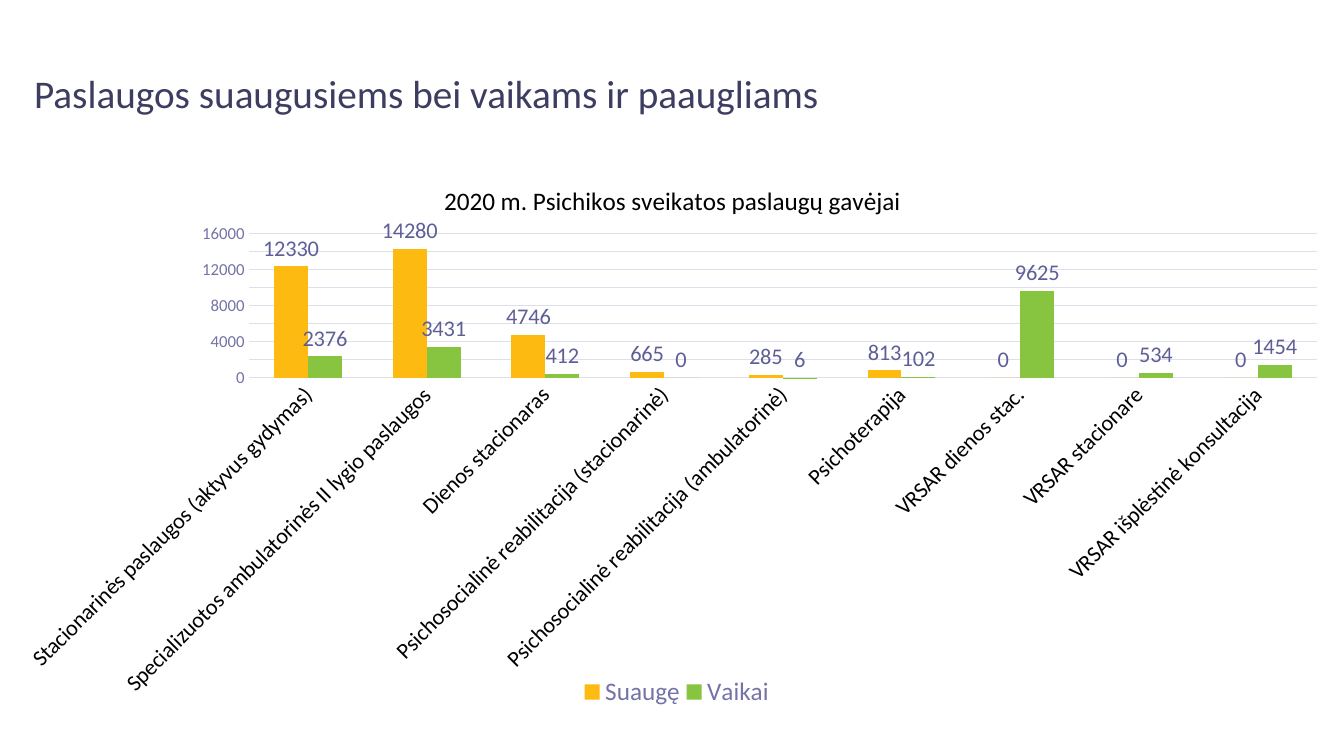
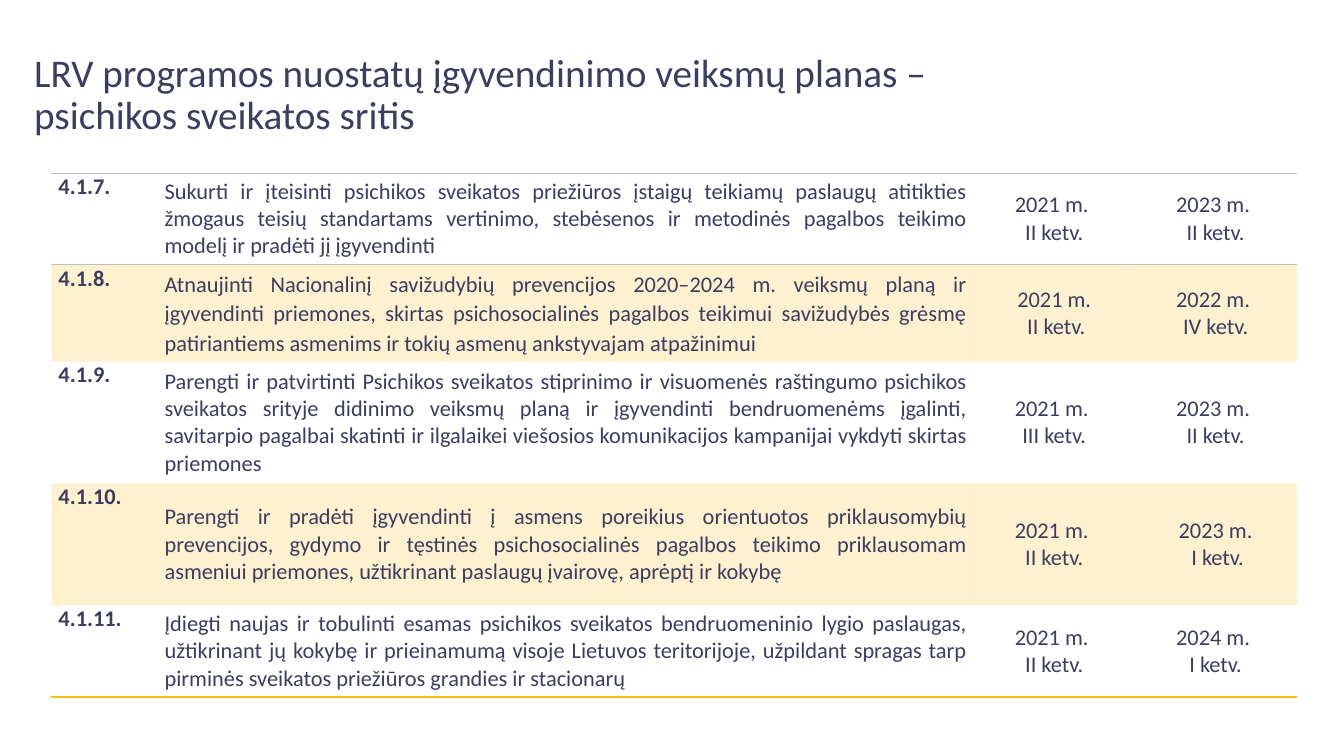
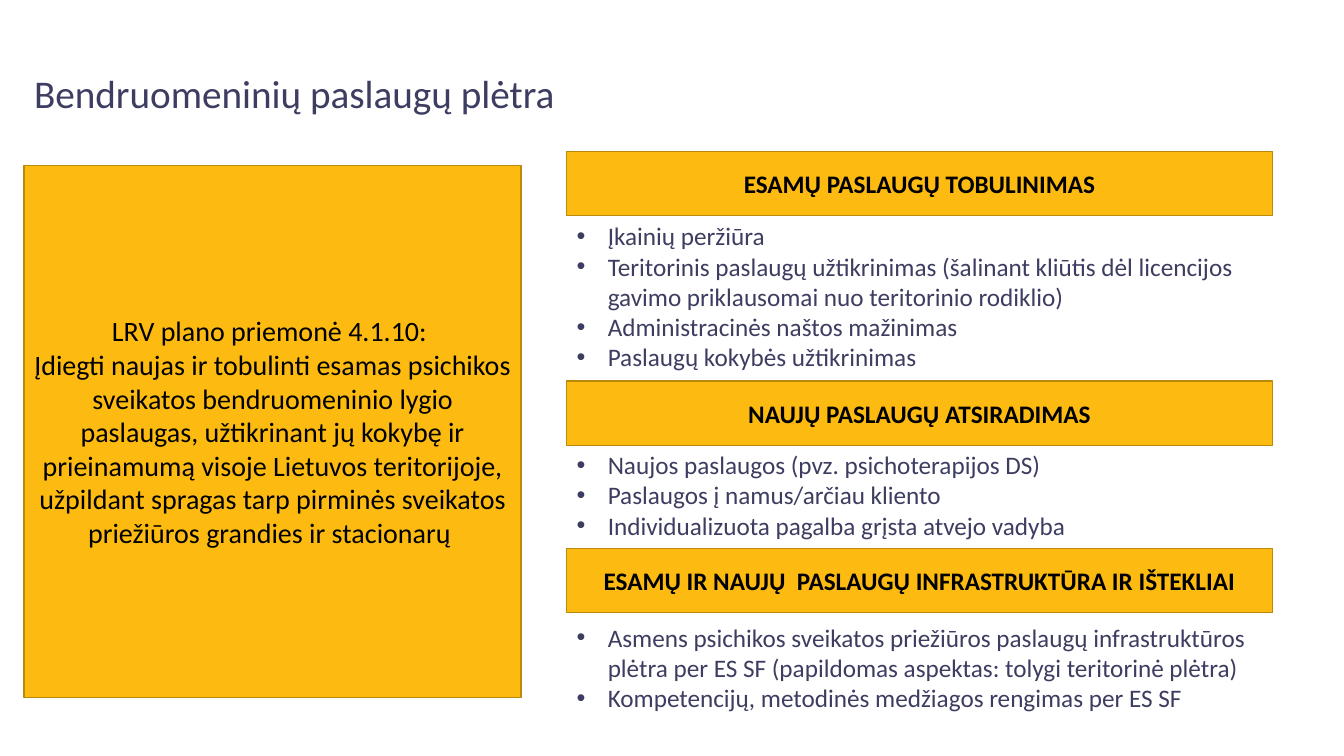
from lxml import etree
from pptx import Presentation
from pptx import util as u
from pptx.chart.data import CategoryChartData
from pptx.dml.color import RGBColor
from pptx.enum import chart as ch, shapes, text
from pptx.oxml import parse_xml
from pptx.oxml.ns import nsdecls, qn

# Shared look
INK, VIOLET, PALE_VIOLET, BLACK = "3D3D61", "5F5F97", "7373A7", "000000"
GOLD, DARK_GOLD, GREEN, GRID, GREY = "FDBB11", "BB8A0D", "87C440", "DFDFEB", "BFBFBF"
rgb = RGBColor.from_string

prs = Presentation()
prs.slide_height = u.Inches(7.5)
prs.slide_width = u.Emu(prs.slide_height * 16 // 9)
COL, ROW = prs.slide_width / 100, prs.slide_height / 100


def area(left, top, width, height):
    """Turn columns and rows of a 100 x 100 grid into lengths."""
    return [u.Emu(round(n * unit)) for n, unit in zip((left, top, width, height), (COL, ROW) * 2)]


def style(font, size, color, bold=False):
    font.name, font.size, font.bold = "Calibri", u.Pt(size), bold
    font.color.rgb = rgb(color)


# Slides with their titles
titles = [
    "Paslaugos suaugusiems bei vaikams ir paaugliams",
    "LRV programos nuostatų įgyvendinimo veiksmų planas – \vpsichikos sveikatos sritis",
    "Bendruomeninių paslaugų plėtra",
]
slides = []
for title in titles:
    s = prs.slides.add_slide(prs.slide_layouts[6])
    tf = s.shapes.add_textbox(*area(1.8, 6.22, 94.75, 12.93)).text_frame
    tf.word_wrap = True
    tf.vertical_anchor = text.MSO_ANCHOR.MIDDLE
    tf.text = title
    p = tf.paragraphs[0]
    p.line_spacing = 0.9
    for r in p.runs:
        style(r.font, 28, INK)
    slides.append(s)
chart_slide, plan_slide, growth_slide = slides

# Slide 1: column chart
data = CategoryChartData()
data.categories = [
    "Stacionarinės paslaugos (aktyvus gydymas)",
    "Specializuotos ambulatorinės II lygio paslaugos",
    "Dienos stacionaras",
    "Psichosocialinė reabilitacija (stacionarinė)",
    "Psichosocialinė reabilitacija (ambulatorinė)",
    "Psichoterapija",
    "VRSAR dienos stac.",
    "VRSAR stacionare",
    "VRSAR išplėstinė konsultacija",
]
data.add_series("Suaugę", [12330, 14280, 4746, 665, 285, 813, 0, 0, 0])
data.add_series("Vaikai", [2376, 3431, 412, 0, 6, 102, 9625, 534, 1454])
chart = chart_slide.shapes.add_chart(
    ch.XL_CHART_TYPE.COLUMN_CLUSTERED, *area(0, 21.87, 100, 74.13), data).chart
style(chart.font, 10, INK)

chart.has_title = True
tf = chart.chart_title.text_frame
tf.text = "2020 m. Psichikos sveikatos paslaugų gavėjai"
style(tf.paragraphs[0].runs[0].font, 18, BLACK)

chart.has_legend = True
chart.legend.position = ch.XL_LEGEND_POSITION.BOTTOM
chart.legend.include_in_layout = False
style(chart.legend.font, 18, PALE_VIOLET)

for axis, size, color in ((chart.category_axis, 16, BLACK), (chart.value_axis, 12, PALE_VIOLET)):
    axis.major_tick_mark = axis.minor_tick_mark = ch.XL_TICK_MARK.NONE
    axis.format.line.fill.background()
    style(axis.tick_labels.font, size, color)
slant = chart.category_axis._element.find(qn("c:txPr"))
slant.find(qn("a:bodyPr")).set("rot", "-2700000")

axis = chart.value_axis
axis.minimum_scale, axis.maximum_scale, axis.major_unit = 0, 16000, 2000
axis.has_major_gridlines = True
axis.major_gridlines.format.line.color.rgb = rgb(GRID)
axis.major_gridlines.format.line.width = u.Pt(0.75)

plot = chart.plots[0]
plot.gap_width, plot.overlap, plot.vary_by_categories = 150, 0, False
for series, color in zip(plot.series, (GOLD, GREEN)):
    series.format.fill.solid()
    series.format.fill.fore_color.rgb = rgb(color)
    labels = series.data_labels
    labels.show_value = True
    labels.position = ch.XL_LABEL_POSITION.OUTSIDE_END
    style(labels.font, 16, VIOLET)

# Places of the chart title, plot and legend, in percent of the chart
plot_area = chart._chartSpace.chart.plotArea
for parent, index, places in (
    (chart.chart_title._element, 1, {"x": 32.7, "y": 2.4}),
    (plot_area, 0, {"x": 18.5, "y": 12.15, "w": 79.5, "h": 25.75}),
    (chart.legend._element, 1, {"x": 43, "y": 90, "w": 14.7, "h": 8}),
):
    for old in parent.findall(qn("c:layout")):
        parent.remove(old)
    layout = parse_xml(f'<c:layout {nsdecls("c")}><c:manualLayout/></c:layout>')
    settings = {"layoutTarget": "inner"} if parent is plot_area else {}
    settings.update(xMode="edge", yMode="edge")
    settings.update((tag, n / 100) for tag, n in places.items())
    for tag, val in settings.items():
        etree.SubElement(layout[0], qn("c:" + tag)).set("val", str(val))
    parent.insert(index, layout)

# Slide 2: table of planned actions (number, action, start, end)
actions = [
    ("4.1.7.", "Sukurti ir įteisinti psichikos sveikatos priežiūros įstaigų teikiamų paslaugų "
     "atitikties žmogaus teisių standartams vertinimo, stebėsenos ir metodinės pagalbos teikimo "
     "modelį ir pradėti jį įgyvendinti ", "2021 m. \nII ketv.", "2023 m. \nII ketv."),
    ("4.1.8.", "Atnaujinti Nacionalinį savižudybių prevencijos 2020–2024 m. veiksmų planą ir "
     "įgyvendinti priemones, skirtas psichosocialinės pagalbos teikimui savižudybės grėsmę "
     "patiriantiems asmenims ir tokių asmenų ankstyvajam atpažinimui ",
     "2021 m.\nII ketv.", "2022 m. \nIV ketv."),
    ("4.1.9.", "Parengti ir patvirtinti Psichikos sveikatos stiprinimo ir visuomenės raštingumo "
     "psichikos sveikatos srityje didinimo veiksmų planą ir įgyvendinti bendruomenėms įgalinti, "
     "savitarpio pagalbai skatinti ir ilgalaikei viešosios komunikacijos kampanijai vykdyti "
     "skirtas priemones", "2021 m. \nIII ketv.", "2023 m. \nII ketv."),
    ("4.1.10.", "Parengti ir pradėti įgyvendinti į asmens poreikius orientuotos priklausomybių "
     "prevencijos, gydymo ir tęstinės psichosocialinės pagalbos teikimo priklausomam asmeniui "
     "priemones, užtikrinant paslaugų įvairovę, aprėptį ir kokybę ",
     "2021 m. \nII ketv.", "2023 m.\nI ketv."),
    ("4.1.11.", "Įdiegti naujas ir tobulinti esamas psichikos sveikatos bendruomeninio lygio "
     "paslaugas, užtikrinant jų kokybę ir prieinamumą visoje Lietuvos teritorijoje, užpildant "
     "spragas tarp pirminės sveikatos priežiūros grandies ir stacionarų ",
     "2021 m. \nII ketv.", "2024 m. \nI ketv."),
]
row_heights = [12.13, 12.8, 16.13, 16.13, 12.13]
col_widths = [7.9, 60.75, 11.93, 12.08]
edges = [GREY, GREY, None, None, None, GOLD]
aligns = [text.PP_ALIGN.LEFT, text.PP_ALIGN.JUSTIFY, text.PP_ALIGN.CENTER, text.PP_ALIGN.CENTER]

table = plan_slide.shapes.add_table(
    len(actions), len(col_widths), *area(3.83, 22.9, sum(col_widths), sum(row_heights))).table
table.first_row = table.horz_banding = False
# Table style without fills and lines
table._tbl.tblPr.find(qn("a:tableStyleId")).text = "{2D5ABB26-0587-4C30-8999-92F81FD0307C}"
for column, width in zip(table.columns, col_widths):
    column.width = u.Emu(round(width * COL))

for i, action in enumerate(actions):
    table.rows[i].height = u.Emu(round(row_heights[i] * ROW))
    for j, words in enumerate(action):
        cell = table.cell(i, j)
        cell.margin_left = cell.margin_right = u.Inches(0.07)
        cell.margin_top = cell.margin_bottom = 0
        cell.vertical_anchor = text.MSO_ANCHOR.MIDDLE if j else text.MSO_ANCHOR.TOP
        cell.text_frame.text = words
        for p in cell.text_frame.paragraphs:
            p.alignment = aligns[j]
            style(p.runs[0].font, 16, INK, bold=j == 0)
        if (i, j) == (1, 1):
            p.line_spacing = 1.07
        if j > 1 and " \n" not in words:
            p._p.get_or_add_pPr().set("indent", str(u.Inches(0.04)))
        # Every second row is tinted
        if i % 2:
            cell.fill.solid()
            cell.fill.fore_color.rgb = rgb(GOLD)
            tint = cell._tc.tcPr.find(".//" + qn("a:srgbClr"))
            etree.SubElement(tint, qn("a:alpha")).set("val", "20000")
        else:
            cell.fill.background()
        # Neighbouring cells agree on the edge between them
        sides = {"lnL": None, "lnR": None, "lnT": edges[i], "lnB": edges[i + 1]}
        for n, (side, color) in enumerate(sides.items()):
            paint = "<a:noFill/>"
            if color:
                paint = f'<a:solidFill><a:srgbClr val="{color}"/></a:solidFill>'
            cell._tc.tcPr.insert(n, parse_xml(
                f'<a:{side} {nsdecls("a")} w="12700">{paint}</a:{side}>'))

# Slide 3: gold panels (place, size, bold, words)
right, width = 42.16, 52.51
panels = [
    ((1.8, 21.87, 36.98, 70.4), 20, False,
     "LRV plano priemonė 4.1.10: \nĮdiegti naujas ir tobulinti esamas psichikos sveikatos "
     "bendruomeninio lygio paslaugas, užtikrinant jų kokybę ir prieinamumą visoje Lietuvos "
     "teritorijoje, užpildant spragas tarp pirminės sveikatos priežiūros grandies ir stacionarų "),
]
for top, heading in (
    (20, "ESAMŲ PASLAUGŲ TOBULINIMAS"),
    (50.4, "NAUJŲ PASLAUGŲ ATSIRADIMAS"),
    (72.53, "ESAMŲ IR NAUJŲ  PASLAUGŲ INFRASTRUKTŪRA IR IŠTEKLIAI"),
):
    panels.append(((right, top, width, 8.53), 18, True, heading))

for place, size, bold, words in panels:
    sp = growth_slide.shapes.add_shape(shapes.MSO_SHAPE.RECTANGLE, *area(*place))
    sp.shadow.inherit = False
    sp.fill.solid()
    sp.fill.fore_color.rgb = rgb(GOLD)
    sp.line.color.rgb = rgb(DARK_GOLD)
    sp.line.width = u.Pt(1)
    tf = sp.text_frame
    tf.word_wrap = True
    tf.vertical_anchor = text.MSO_ANCHOR.MIDDLE
    tf.text = words
    for p in tf.paragraphs:
        p.alignment = text.PP_ALIGN.CENTER
        style(p.runs[0].font, size, BLACK, bold)

# Bulleted lists under the headings
for top, height, items in (
    (28.53, 25.6, [
        "Įkainių peržiūra",
        "Teritorinis paslaugų užtikrinimas (šalinant kliūtis dėl licencijos gavimo "
        "priklausomai nuo teritorinio rodiklio)",
        "Administracinės naštos mažinimas",
        "Paslaugų kokybės užtikrinimas"]),
    (58.8, 13.47, [
        "Naujos paslaugos (pvz. psichoterapijos DS)",
        "Paslaugos į namus/arčiau kliento",
        "Individualizuota pagalba grįsta atvejo vadyba"]),
    (81.6, 17.47, [
        "Asmens psichikos sveikatos priežiūros paslaugų infrastruktūros plėtra per ES SF "
        "(papildomas aspektas: tolygi teritorinė plėtra)",
        "Kompetencijų, metodinės medžiagos rengimas per ES SF"]),
):
    tf = growth_slide.shapes.add_textbox(*area(right, top, width, height)).text_frame
    tf.word_wrap = True
    tf.text = "\n".join(items)
    for p in tf.paragraphs:
        pPr = p._p.get_or_add_pPr()
        pPr.set("marL", str(u.Inches(0.31)))
        pPr.set("indent", str(-u.Inches(0.31)))
        etree.SubElement(pPr, qn("a:buFont")).set("typeface", "Arial")
        etree.SubElement(pPr, qn("a:buChar")).set("char", "•")
        style(p.runs[0].font, 18, INK)

prs.save("out.pptx")
